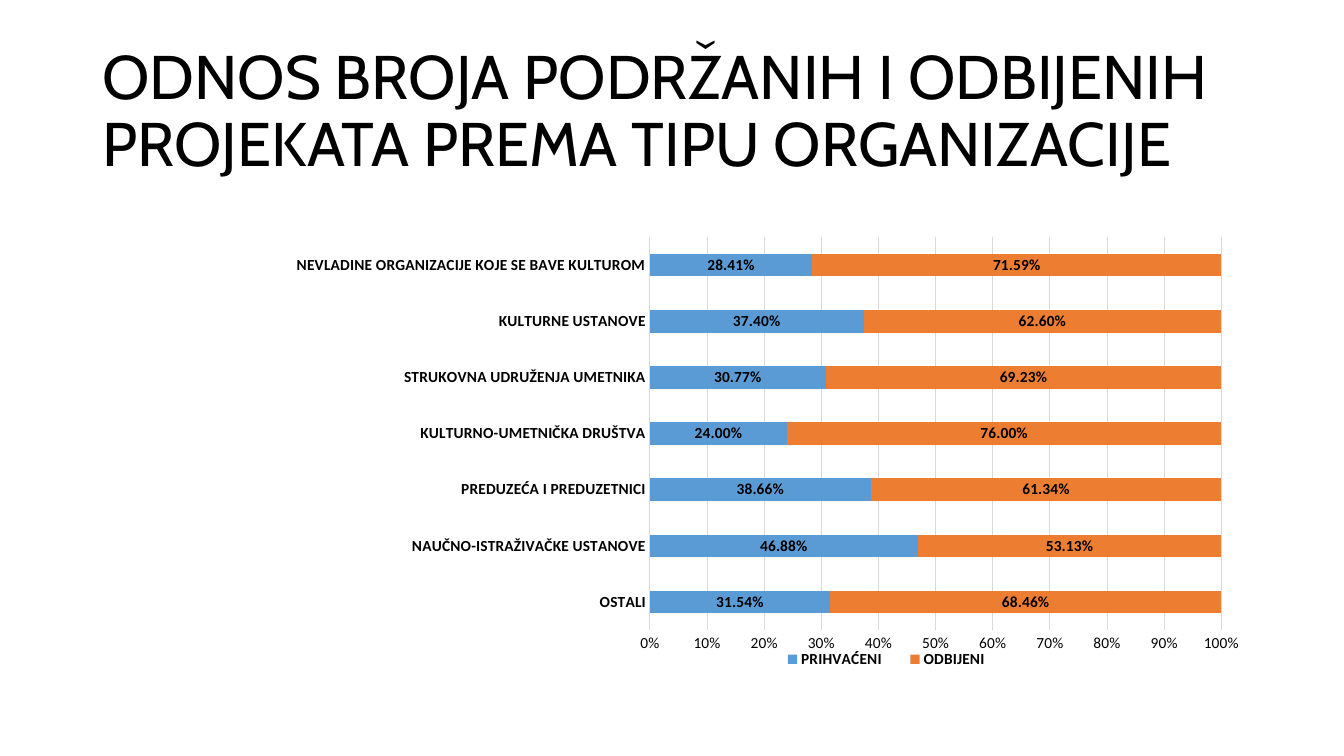
import pptx
import pptx.chart.data
import pptx.dml.color
import pptx.enum.chart
import pptx.enum.text
import pptx.oxml
import pptx.oxml.ns
import pptx.util

Cm, Pt = pptx.util.Cm, pptx.util.Pt
xl = pptx.enum.chart


def paint(fmt, color):
    """Give a font, or a fill, a solid colour from a hex string."""
    fill = getattr(fmt, "fill", fmt)
    fill.solid()
    fill.fore_color.rgb = pptx.dml.color.RGBColor.from_string(color)


def manual_layout(inner, **fractions):
    """Build a layout element from fractions of the chart's size."""
    target = '<c:layoutTarget val="inner"/>' if inner else ""
    modes = '<c:xMode val="edge"/><c:yMode val="edge"/>'
    places = "".join(f'<c:{k} val="{v}"/>' for k, v in fractions.items())
    return pptx.oxml.parse_xml(
        f'<c:layout {pptx.oxml.ns.nsdecls("c")}><c:manualLayout>'
        f"{target}{modes}{places}</c:manualLayout></c:layout>")


prs = pptx.Presentation()
prs.slide_width, prs.slide_height = Cm(33.87), Cm(19.05)
s = prs.slides.add_slide(prs.slide_layouts[6])

# Title
tf = s.shapes.add_textbox(Cm(2.33), Cm(1.01), Cm(29.21), Cm(3.68)).text_frame
tf.word_wrap = True
tf.vertical_anchor = pptx.enum.text.MSO_ANCHOR.MIDDLE
p = tf.paragraphs[0]
p.line_spacing = 0.9
r = p.add_run()
r.text = "ODNOS BROJA PODRŽANIH I ODBIJENIH PROJEKATA PREMA TIPU ORGANIZACIJE"
r.font.name, r.font.size = "Cabin", Pt(44)
paint(r.font, "000000")

# Chart data, from the bottom bar up
shares = [
    ("OSTALI", 0.3154, 0.6846),
    ("NAUČNO-ISTRAŽIVAČKE USTANOVE", 0.4688, 0.5313),
    ("PREDUZEĆA I PREDUZETNICI", 0.3866, 0.6134),
    ("KULTURNO-UMETNIČKA DRUŠTVA", 0.24, 0.76),
    ("STRUKOVNA UDRUŽENJA UMETNIKA", 0.3077, 0.6923),
    ("KULTURNE USTANOVE", 0.374, 0.626),
    ("NEVLADINE ORGANIZACIJE KOJE SE BAVE KULTUROM", 0.2841, 0.7159),
]
names, accepted, rejected = zip(*shares)
data = pptx.chart.data.CategoryChartData(number_format="0.00%")
data.categories = names
data.add_series("PRIHVAĆENI", accepted)
data.add_series("ODBIJENI", rejected)

# Stacked bars
chart = s.shapes.add_chart(
    xl.XL_CHART_TYPE.BAR_STACKED_100,
    Cm(2.33), Cm(5.07), Cm(29.21), Cm(12.09), data).chart
chart.has_title = False
plot = chart.plots[0]
plot.gap_width, plot.overlap, plot.vary_by_categories = 150, 100, False
fonts = []
for series, color in zip(plot.series, ("5B9BD5", "ED7D31")):
    paint(series.format, color)
    labels = series.data_labels
    label_format = {"show_value": True, "number_format": "0.00%",
                    "number_format_is_linked": False,
                    "position": xl.XL_LABEL_POSITION.CENTER}
    for key, value in label_format.items():
        setattr(labels, key, value)
    fonts.append((labels.font, True))

# Axes
cat, val = chart.category_axis, chart.value_axis
for axis in (cat, val):
    axis.major_tick_mark = axis.minor_tick_mark = xl.XL_TICK_MARK.NONE
val.minimum_scale, val.maximum_scale, val.major_unit = 0, 1, 0.1
val.tick_labels.number_format = "0%"
val.tick_labels.number_format_is_linked = False
val.has_major_gridlines = True
val.format.line.fill.background()
for line in (cat.format.line, val.major_gridlines.format.line):
    paint(line, "D9D9D9")
    line.width = Pt(0.75)

# Legend
chart.has_legend = True
legend = chart.legend
legend.position = xl.XL_LEGEND_POSITION.BOTTOM
legend.include_in_layout = False

# Text of labels, axes and legend
fonts += [(cat.tick_labels.font, True), (val.tick_labels.font, False),
          (legend.font, True)]
for font, bold in fonts:
    for key, value in {"name": "Calibri", "size": Pt(11), "bold": bold}.items():
        setattr(font, key, value)
    paint(font, "000000")

# Places of the plot and the legend inside the chart
c = pptx.oxml.ns.qn
area = chart._chartSpace.find(f".//{c('c:plotArea')}")
key_box = chart._chartSpace.find(f".//{c('c:legend')}")
for parent in (area, key_box):
    for old in parent.findall(c("c:layout")):
        parent.remove(old)
area.insert(0, manual_layout(True, x=0.481, y=0.075, w=0.493, h=0.819))
key_box.find(c("c:legendPos")).addnext(
    manual_layout(False, x=0.58, y=0.93, w=0.21, h=0.05))

prs.save("out.pptx")
